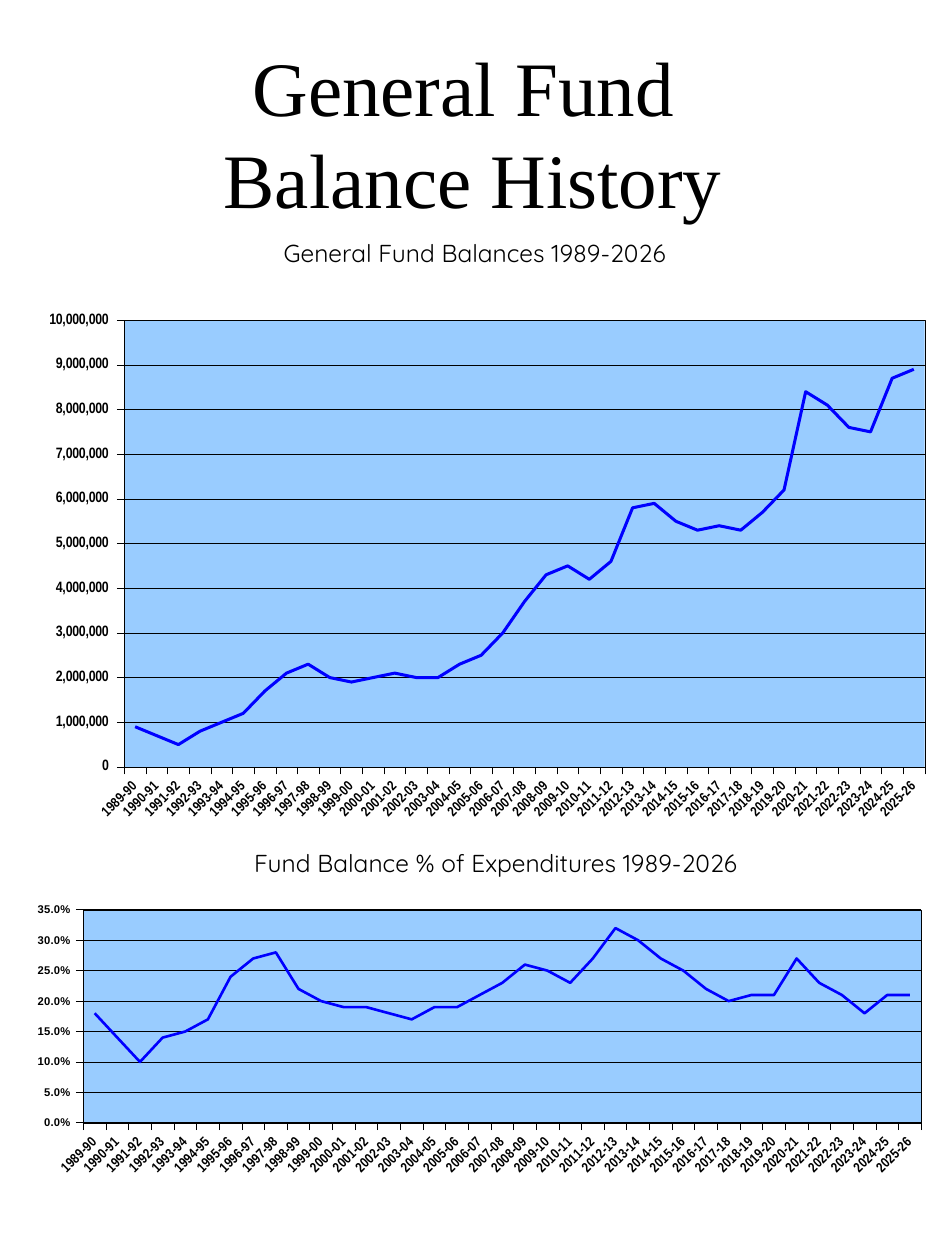
from lxml import etree
from pptx import Presentation
from pptx.chart.data import CategoryChartData
from pptx.dml.color import RGBColor
from pptx.enum.chart import XL_CHART_TYPE, XL_TICK_MARK
from pptx.enum.text import MSO_ANCHOR, MSO_AUTO_SIZE, PP_ALIGN
from pptx.oxml import parse_xml
from pptx.oxml.ns import nsdecls, qn
from pptx.util import Inches, Pt

CENTER = PP_ALIGN.CENTER
MIDDLE = MSO_ANCHOR.MIDDLE
FIT_SHAPE = MSO_AUTO_SIZE.SHAPE_TO_FIT_TEXT
OUTSIDE = XL_TICK_MARK.OUTSIDE

COLORS = {"text": "000000", "line": "0000FF", "plot": "99CCFF"}
TITLE = "General Fund \vBalance History"
TITLE_AREA = (71, 32, 804, 199)
HEADINGS = [
    ("General Fund Balances 1989-2026", (255, 232, 440, 43)),
    ("Fund Balance % of Expenditures 1989-2026", (222, 842, 548, 43)),
]
YEARS = [f"{year}-{(year + 1) % 100:02d}" for year in range(1989, 2026)]

BALANCES_IN_100K = [
    9, 7, 5, 8, 10, 12, 17, 21, 23, 20, 19, 20, 21, 20, 20, 23, 25, 30, 37,
    43, 45, 42, 46, 58, 59, 55, 53, 54, 53, 57, 62, 84, 81, 76, 75, 87, 89,
]
PERCENTAGES = [
    18, 14, 10, 14, 15, 17, 24, 27, 28, 22, 20, 19, 19, 18, 17, 19, 19, 21, 23,
    26, 25, 23, 27, 32, 30, 27, 25, 22, 20, 21, 21, 27, 23, 21, 18, 21, 21,
]
CHARTS = [
    {
        "kind": XL_CHART_TYPE.LINE_STACKED, "area": (15, 291, 919, 532),
        "values": [value * 100_000 for value in BALANCES_IN_100K],
        "maximum": 10_000_000, "step": 1_000_000,
        "format": r"#,##0_);\(#,##0\)", "value_font": ("Arial Narrow", 8.6),
        "plot": (0.119, 0.055, 0.871, 0.84), "axis_width": 0.14, "line_width": 1.72,
    },
    {
        "kind": XL_CHART_TYPE.LINE, "area": (8, 858, 931, 396),
        "values": [value / 100 for value in PERCENTAGES],
        "maximum": 0.35, "step": 0.05,
        "format": "0.0%", "value_font": ("Arial", 6.4),
        "plot": (0.081, 0.131, 0.9, 0.538), "axis_width": 0.37, "line_width": 1.5,
    },
]


def px(lengths):
    return [round(length * Inches(1) / 126) for length in lengths]


def color(name):
    return RGBColor.from_string(COLORS[name])


def set_font(font, name, size, bold=False):
    font.name, font.size, font.bold = name, Pt(size), bold
    font.color.rgb = color("text")


def set_line(line, name, width):
    line.color.rgb = color(name)
    line.width = Pt(width)


def format_plot_area(chart, bounds, border):
    """Fix the inner plot area as fractions of the chart and fill it."""
    area = chart._chartSpace.chart.plotArea
    for layout in area.findall(qn("c:layout")):
        area.remove(layout)
    modes = "".join(f'<c:{side}Mode val="edge"/>' for side in "xy")
    sizes = "".join(f'<c:{side} val="{value}"/>' for side, value in zip("xywh", bounds))
    area.insert(0, parse_xml(
        f'<c:layout {nsdecls("c")}><c:manualLayout><c:layoutTarget val="inner"/>'
        f"{modes}{sizes}</c:manualLayout></c:layout>"))
    area.append(parse_xml(
        f'<c:spPr {nsdecls("c", "a")}>'
        f'<a:solidFill><a:srgbClr val="{COLORS["plot"]}"/></a:solidFill>'
        f'<a:ln w="{Pt(border)}"><a:solidFill><a:srgbClr val="{COLORS["text"]}"/>'
        "</a:solidFill></a:ln></c:spPr>"))


def show_slanted_labels(axis):
    """Slant the labels by 45 degrees and show every one."""
    element = axis._element
    element.find(qn("c:txPr")).find(qn("a:bodyPr")).set("rot", "-2700000")
    skip = etree.Element(qn("c:tickLblSkip"), val="1")
    element.find(qn("c:noMultiLvlLbl")).addprevious(skip)


def add_line_chart(page, item):
    data = CategoryChartData(number_format=item["format"])
    data.categories = YEARS
    data.add_series("Series 1", item["values"])
    chart = page.shapes.add_chart(item["kind"], *px(item["area"]), data).chart
    chart.has_title = chart.has_legend = False
    set_font(chart.font, "Arial", 6.4)
    format_plot_area(chart, item["plot"], item["axis_width"])

    years, amounts = chart.category_axis, chart.value_axis
    for axis, font in ((years, ("Arial Narrow", 8)), (amounts, item["value_font"])):
        axis.major_tick_mark = OUTSIDE
        set_font(axis.tick_labels.font, *font, bold=True)
        set_line(axis.format.line, "text", item["axis_width"])
    show_slanted_labels(years)
    amounts.minimum_scale, amounts.maximum_scale = 0, item["maximum"]
    amounts.major_unit = item["step"]
    amounts.tick_labels.number_format = item["format"]
    amounts.tick_labels.number_format_is_linked = False
    set_line(amounts.major_gridlines.format.line, "text", item["axis_width"])

    series = chart.plots[0].series[0]
    series.smooth = False
    set_line(series.format.line, "line", item["line_width"])
    chart.plots[0].vary_by_categories = False


def write(frame, text, font, size):
    frame.text = text
    paragraph = frame.paragraphs[0]
    paragraph.alignment = CENTER
    set_font(paragraph.font, font, size)


def main():
    deck = Presentation()
    deck.slide_width, deck.slide_height = Inches(7.5), Inches(10)
    page = deck.slides.add_slide(deck.slide_layouts.get_by_name("Title Only"))

    title = page.shapes.title
    title.left, title.top, title.width, title.height = px(TITLE_AREA)
    title.text_frame.vertical_anchor = MIDDLE
    write(title.text_frame, TITLE, "Times New Roman", 44)

    for item in CHARTS:
        add_line_chart(page, item)
    for text, area in HEADINGS:
        frame = page.shapes.add_textbox(*px(area)).text_frame
        frame.word_wrap = False
        frame.auto_size = FIT_SHAPE
        write(frame, text, "Quicksand", 14)

    deck.save("out.pptx")


if __name__ == "__main__":
    main()
